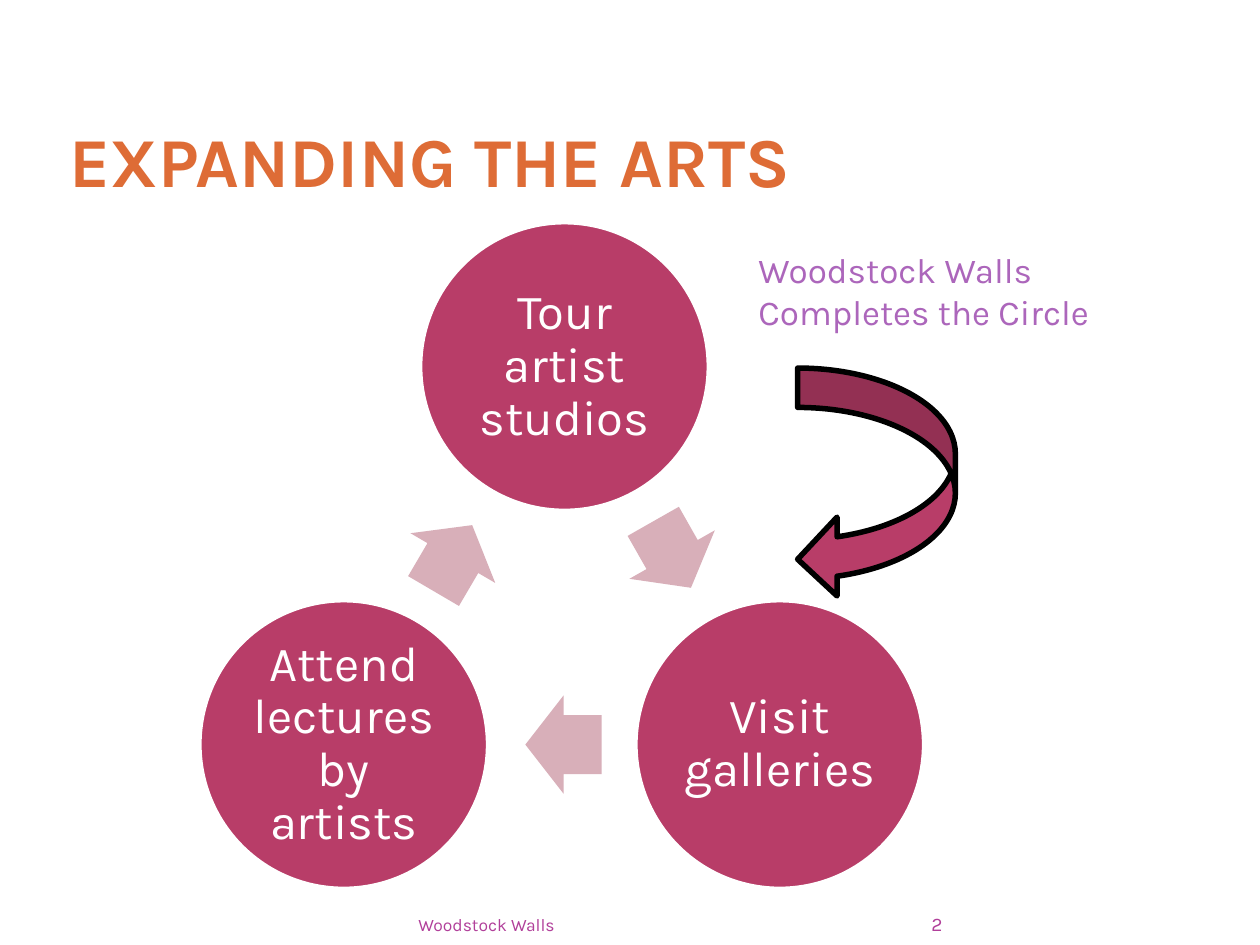
from pptx import Presentation, util as u
from pptx.dml.color import RGBColor
from pptx.enum import shapes, text

FONT = "Karla"
ORANGE = RGBColor(0xDE, 0x6C, 0x36)
ROSE = RGBColor(0xB8, 0x3D, 0x68)
PINK = RGBColor(0xD8, 0xAF, 0xB9)
PURPLE = RGBColor(0xB1, 0x3F, 0x9A)
LILAC = RGBColor(0xAC, 0x66, 0xBB)
WHITE = RGBColor(0xFF, 0xFF, 0xFF)
BLACK = RGBColor(0, 0, 0)
LEFT, MID, RIGHT = text.PP_ALIGN.LEFT, text.PP_ALIGN.CENTER, text.PP_ALIGN.RIGHT
TOP, CENTER, BOTTOM = (
    text.MSO_ANCHOR.TOP, text.MSO_ANCHOR.MIDDLE, text.MSO_ANCHOR.BOTTOM)
KIND = shapes.MSO_SHAPE
SIZE = 5.84
STEPS = [
    ("Tour artist studios", 8.46, 4.47),
    ("Visit galleries", 12.8, 12.09),
    ("Attend lectures by artists", 4.01, 12.09),
]
ARROWS = [(12.78, 10.19, 60.4), (10.59, 14.02, 180), (8.36, 10.26, 300.4)]


def write(shape, words, size, color, align=LEFT, anchor=TOP, pad=(0.25, 0.13)):
    """Put one styled paragraph in a shape."""
    frame = shape.text_frame
    frame.text = words
    frame.word_wrap = True
    frame.auto_size = text.MSO_AUTO_SIZE.NONE
    frame.vertical_anchor = anchor
    frame.margin_left = frame.margin_right = u.Cm(pad[0])
    frame.margin_top = frame.margin_bottom = u.Cm(pad[1])
    para = frame.paragraphs[0]
    para.alignment = align
    para.font.name = FONT
    para.font.size = u.Pt(size)
    para.font.color.rgb = color
    return para


def head(slide, words):
    """Place and style the title."""
    title = slide.shapes.title
    title.left, title.top = u.Cm(1.27), u.Cm(0.89)
    title.width, title.height = u.Cm(20.12), u.Cm(3.18)
    para = write(title, words, 40, ORANGE, anchor=BOTTOM, pad=(0.13, 0))
    para.font.bold = True


def label(slide, box, *args, **style):
    """Add a text box."""
    write(slide.shapes.add_textbox(*map(u.Cm, box)), *args, **style)


def form(slide, kind, box, fill, edge=None):
    """Add a filled shape with an optional outline."""
    shape = slide.shapes.add_shape(kind, *map(u.Cm, box))
    shape.shadow.inherit = False
    shape.fill.solid()
    shape.fill.fore_color.rgb = fill
    if edge is None:
        shape.line.fill.background()
    else:
        shape.line.color.rgb = edge
        shape.line.width = u.Pt(3.15)
    return shape


def step(slide, words, left, top):
    """Add one circle of the cycle."""
    disc = form(slide, KIND.OVAL, (left, top, SIZE, SIZE), ROSE, WHITE)
    para = write(disc, words, 28, WHITE, MID, CENTER, (0.1, 0.1))
    para.line_spacing = 0.9


def arrow(slide, left, top, turn):
    """Add one arrow between two circles."""
    shape = form(slide, KIND.RIGHT_ARROW, (left, top, 1.54, 1.98), PINK)
    shape.adjustments[0] = 0.6
    shape.adjustments[1] = 0.5
    shape.rotation = turn


def main():
    """Build the slide."""
    deck = Presentation()
    deck.slide_width, deck.slide_height = u.Cm(25.4), u.Cm(19.05)
    slide = deck.slides.add_slide(deck.slide_layouts[5])
    head(slide, "EXPANDING THE ARTS")
    for item, link in zip(STEPS, ARROWS):
        step(slide, *item)
        arrow(slide, *link)
    label(slide, (1.27, 18.21, 10.16, 0.64), "Woodstock Walls", 10, PURPLE,
          align=RIGHT, anchor=BOTTOM, pad=(0.25, 0))
    label(slide, (17.37, 18.21, 1.63, 0.64), "2", 11, PURPLE,
          align=RIGHT, anchor=BOTTOM, pad=(0, 0))
    label(slide, (15.04, 4.88, 7.42, 1.96),
          "Woodstock Walls Completes the Circle", 20, LILAC)
    form(slide, KIND.CURVED_LEFT_ARROW, (16.08, 7.42, 3.18, 4.65), ROSE, BLACK)
    deck.save("out.pptx")


if __name__ == "__main__":
    main()
